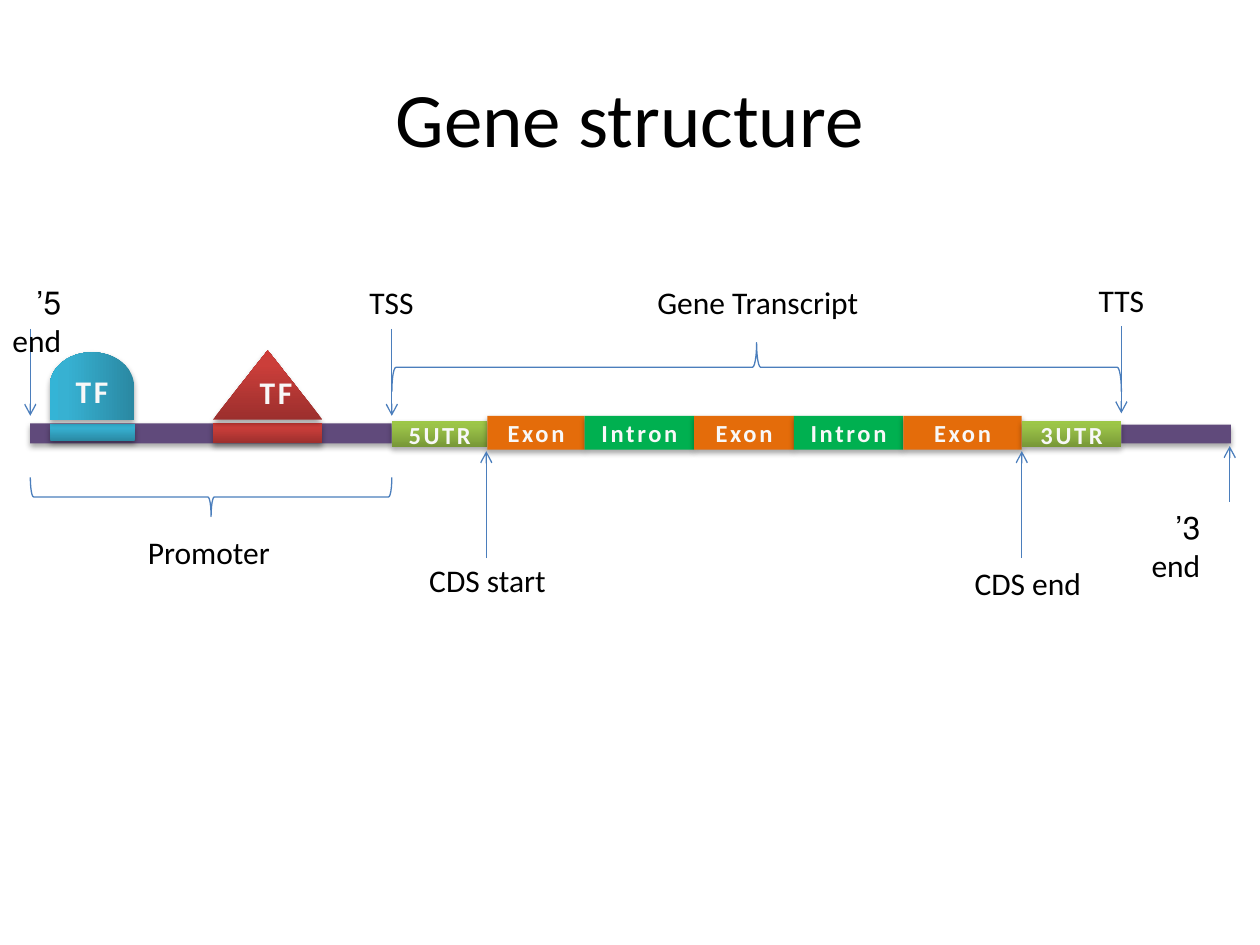
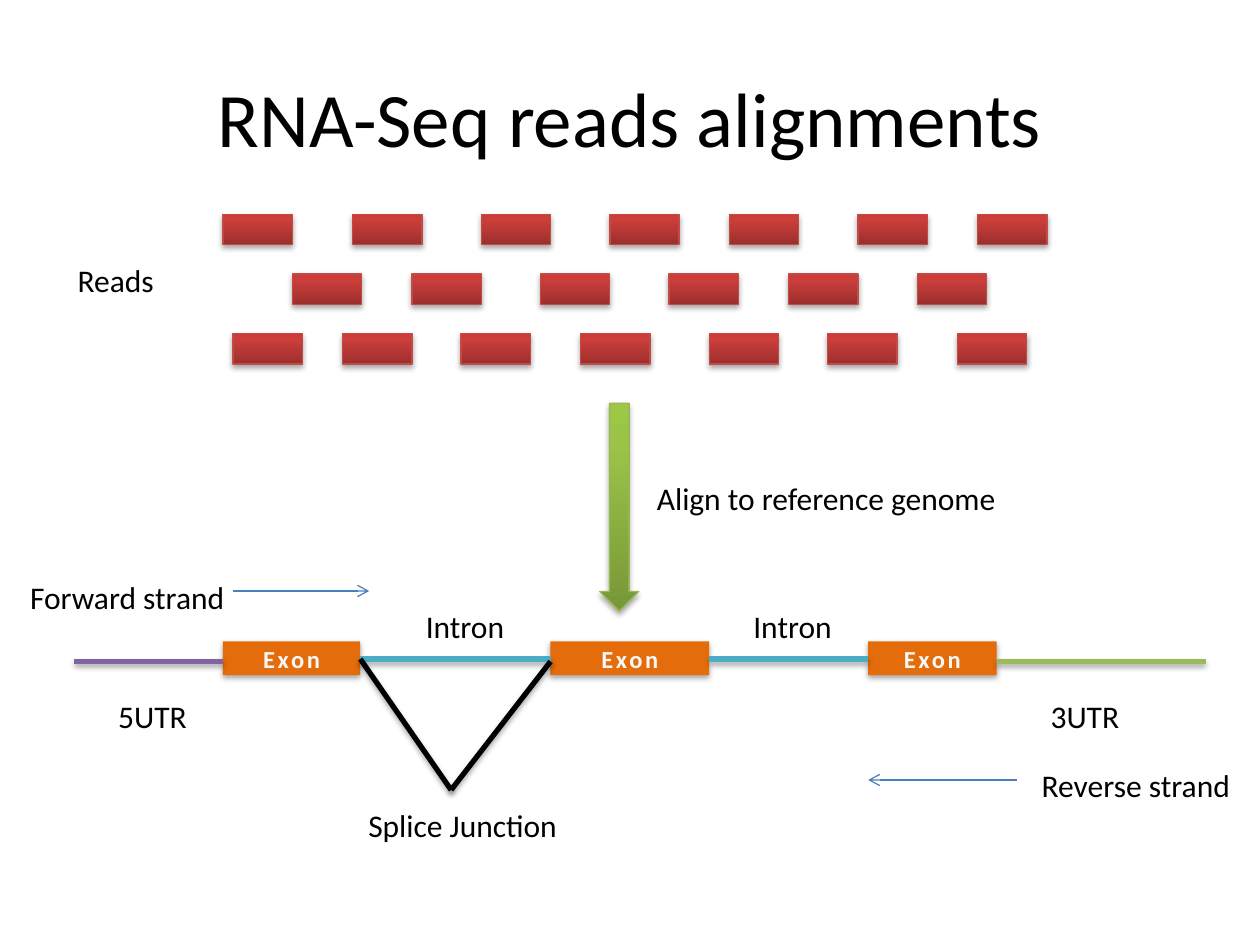
from itertools import pairwise

from pptx import Presentation
from pptx.dml.color import RGBColor
from pptx.enum.shapes import MSO_CONNECTOR, MSO_SHAPE as SHAPE
from pptx.enum.text import MSO_ANCHOR as ANCHOR, PP_ALIGN as ALIGN
from pptx.oxml import parse_xml
from pptx.oxml.ns import nsdecls, qn
from pptx.util import Pt

FONT = "Calibri"
BLACK = RGBColor(0x00, 0x00, 0x00)
OFF_WHITE = RGBColor(0xF8, 0xF8, 0xF8)
LINE_BLUE = RGBColor(0x4B, 0x7E, 0xBC)
DARK_PURPLE = RGBColor(0x60, 0x4A, 0x7B)
PURPLE = RGBColor(0x80, 0x64, 0xA2)
ORANGE = RGBColor(0xE4, 0x6C, 0x0A)
INTRON_GREEN = RGBColor(0x00, 0xB0, 0x50)
TEAL = RGBColor(0x4B, 0xAC, 0xC6)
GREEN = RGBColor(0x9B, 0xBB, 0x59)
GREEN_EDGE = RGBColor(0x98, 0xB9, 0x55)
RED_EDGE = RGBColor(0xBF, 0x4C, 0x48)

# Gradients run from the bottom up, with stops at 0, 80 and 100 percent
GREEN_GRADIENT = (RGBColor(0x77, 0x97, 0x37), RGBColor(0x9B, 0xC3, 0x48), RGBColor(0x9D, 0xC7, 0x46))
BLUE_GRADIENT = (RGBColor(0x2A, 0x88, 0xA2), RGBColor(0x37, 0xB1, 0xD2), RGBColor(0x34, 0xB4, 0xD6))
RED_GRADIENT = (RGBColor(0x9C, 0x2F, 0x2D), RGBColor(0xCB, 0x3E, 0x3A), RGBColor(0xCE, 0x3B, 0x37))

EXON_H = 19.4
LABEL_H = 28.8


def write(tf, text, size, color=BLACK, align=ALIGN.RIGHT, strong=False):
    """Add one right-to-left paragraph; strong text is bold and spaced out."""
    p = tf.paragraphs[0]
    p.alignment = align
    p._p.get_or_add_pPr().set("rtl", "1")
    r = p.add_run()
    r.text = text
    r.font.name, r.font.size, r.font.bold = FONT, Pt(size), strong
    r.font.color.rgb = color
    if strong:
        r._r.get_or_add_rPr().set("spc", "150")


def add_title(s, text):
    tf = s.shapes.add_textbox(Pt(36), Pt(21.6), Pt(648), Pt(90)).text_frame
    tf.word_wrap = True
    tf.vertical_anchor = ANCHOR.MIDDLE
    write(tf, text, 44, align=ALIGN.CENTER)


def add_label(s, text, x, y, w, color=BLACK, strong=False):
    tf = s.shapes.add_textbox(Pt(x), Pt(y), Pt(w), Pt(LABEL_H)).text_frame
    tf.word_wrap = False
    write(tf, text, 18, color, strong=strong)
    return tf


def add_end_label(s, text, x, y):
    """Label of a strand end, broken over two lines by a wide right margin."""
    tf = add_label(s, text, x, y, 60.5)
    tf.word_wrap = True
    tf.margin_left, tf.margin_right = Pt(0), Pt(25.5)


def cast_shadow(sp):
    sp.element.spPr.find(qn("a:effectLst")).append(parse_xml(
        f'<a:outerShdw {nsdecls("a")} blurRad="40000" dist="23000" dir="5400000" '
        'rotWithShape="0"><a:srgbClr val="000000"><a:alpha val="35000"/>'
        '</a:srgbClr></a:outerShdw>'))


def fill_gradient(sp, colors):
    sp.fill.gradient()
    stops = "".join(f'<a:gs pos="{pos}000"><a:srgbClr val="{color}"/></a:gs>'
                    for pos, color in zip((0, 80, 100), colors))
    spPr = sp.element.spPr
    spPr.replace(spPr.find(qn("a:gradFill")), parse_xml(
        f'<a:gradFill {nsdecls("a")} rotWithShape="1"><a:gsLst>{stops}</a:gsLst>'
        '<a:lin ang="16200000" scaled="0"/></a:gradFill>'))


def add_block(s, x, y, w, h, fill, text="", kind=SHAPE.RECTANGLE, edge=None, size=14):
    """Shadowed shape; fill is one colour or a tuple of gradient colours."""
    sp = s.shapes.add_shape(kind, Pt(x), Pt(y), Pt(w), Pt(h))
    if isinstance(fill, RGBColor):
        sp.fill.solid()
        sp.fill.fore_color.rgb = fill
    else:
        fill_gradient(sp, fill)
    if edge is None:
        sp.line.fill.background()
    else:
        sp.line.color.rgb = edge
        sp.line.width = Pt(0.75)
    sp.shadow.inherit = False
    cast_shadow(sp)
    if text:
        sp.text_frame.vertical_anchor = ANCHOR.MIDDLE
        write(sp.text_frame, text, size, OFF_WHITE, ALIGN.CENTER, strong=True)
    return sp


def add_line(s, x1, y1, x2, y2, color, width):
    line = s.shapes.add_connector(MSO_CONNECTOR.STRAIGHT, Pt(x1), Pt(y1), Pt(x2), Pt(y2))
    line.line.color.rgb = color
    line.line.width = Pt(width)
    line.element.spPr.append(parse_xml(f'<a:effectLst {nsdecls("a")}/>'))
    return line


def add_arrow(s, x1, y1, x2, y2):
    arrow = add_line(s, x1, y1, x2, y2, LINE_BLUE, 0.75)
    arrow.element.spPr.find(qn("a:ln")).append(
        parse_xml(f'<a:tailEnd {nsdecls("a")} type="arrow"/>'))


def add_strand(s, x1, y1, x2, y2, color):
    cast_shadow(add_line(s, x1, y1, x2, y2, color, 3))


def add_brace(s, left, top, width, depth, rotation):
    """Horizontal brace over the given area: rotation 90 points down, 270 up."""
    x, y = left + (width - depth) / 2, top + (depth - width) / 2
    sp = s.shapes.add_shape(SHAPE.RIGHT_BRACE, Pt(x), Pt(y), Pt(depth), Pt(width))
    sp.rotation = rotation
    sp.fill.background()
    sp.line.color.rgb = LINE_BLUE
    sp.line.width = Pt(0.75)
    sp.shadow.inherit = False


def add_transcription_factors(s):
    add_block(s, 28.8, 242.6, 48.2, 9.4, BLUE_GRADIENT)
    dome = add_block(s, 33.1, 196.6, 38.9, 48.2, BLUE_GRADIENT, "TF",
                     SHAPE.FLOWCHART_DELAY, size=18)
    dome.rotation = 270
    dome.text_frame._txBody.bodyPr.set("vert", "vert")
    add_block(s, 121.7, 241.9, 62.6, 11.5, RED_GRADIENT)
    add_block(s, 121.7, 200.2, 62.6, 39.6, RED_GRADIENT, kind=SHAPE.ISOSCELES_TRIANGLE)
    add_label(s, "TF ", 135.4, 209.5, 40.3, OFF_WHITE, strong=True)


def add_transcript(s):
    """Segments that lie end to end from the start to the end of transcription."""
    styles = {"UTR": (240.8, 14.8, GREEN_GRADIENT), "Exon": (237.6, EXON_H, ORANGE),
              "Intron": (237.6, EXON_H, INTRON_GREEN)}
    names = ("5UTR", "Exon", "Intron", "Exon", "Intron", "Exon", "3UTR")
    edges = (223.9, 278.6, 334.1, 396.7, 453.6, 516.2, 583.9, 640.8)
    for name, (left, right) in zip(names, pairwise(edges)):
        y, h, fill = styles[name.lstrip("35")]
        add_block(s, left, y, right - left, h, fill, name)


def build_gene_structure(s):
    add_title(s, "Gene structure")
    add_block(s, 17.3, 241.9, 206.6, 11.5, DARK_PURPLE)
    add_block(s, 640.8, 242.6, 62.6, 10.8, DARK_PURPLE)
    add_transcription_factors(s)
    add_transcript(s)
    add_brace(s, 17.3, 272.8, 206.6, 22.3, 90)
    add_brace(s, 223.9, 195.8, 416.9, 28.1, 270)
    for x, start, end in ((17.3, 187.9, 237.6), (223.9, 187.9, 237.6),
                          (640.8, 186.5, 236.2), (277.9, 319, 257.8),
                          (583.9, 319, 257.8), (702.7, 286.6, 254.9)):
        add_arrow(s, x, start, x, end)
    add_end_label(s, "5’ end", 0, 158.4)
    add_end_label(s, "3’ end", 650.9, 286.6)
    for text, x, y, w in (("TSS", 203.8, 158.4, 39.6), ("TTS", 619.9, 157, 41),
                          ("Gene Transcript", 365.8, 158.4, 131.8),
                          ("Promoter", 76.3, 301, 85),
                          ("CDS start", 236.9, 316.8, 82.1),
                          ("CDS end", 548.6, 319, 76.3)):
        add_label(s, text, x, y, w)


def add_reads(s):
    rows = {122.4: (127.4, 201.6, 275, 348.5, 416.9, 490.3, 558.7),
            156.6: (167, 235.4, 308.9, 382.3, 450.7, 524.2),
            190.8: (133.2, 195.8, 263.5, 331.9, 405.4, 473, 547.2)}
    for y, lefts in rows.items():
        for x in lefts:
            add_block(s, x, y, 39.6, 17.3, RED_GRADIENT, edge=RED_EDGE)


def build_read_alignments(s):
    add_title(s, "RNA-Seq reads alignments")
    add_reads(s)
    add_block(s, 342.7, 230.4, 22.3, 118.8, GREEN_GRADIENT,
              kind=SHAPE.DOWN_ARROW, edge=GREEN_EDGE)
    for x, w in ((127.4, 78.5), (314.6, 90.7), (496.1, 73.4)):
        add_block(s, x, 366.5, w, EXON_H, ORANGE, "Exon")
    for x1, y1, x2, y2, color in ((205.9, 376.6, 314.6, 376.6, TEAL),
                                  (405.4, 376.6, 496.1, 376.6, TEAL),
                                  (127.4, 378, 42.5, 378, PURPLE),
                                  (689, 378, 569.5, 378, GREEN),
                                  (314.6, 378, 257.8, 451.4, BLACK),
                                  (205.9, 376.6, 257.8, 451.4, BLACK)):
        add_strand(s, x1, y1, x2, y2, color)
    add_arrow(s, 133.2, 337.7, 211, 337.7)
    add_arrow(s, 581, 445.7, 496.1, 445.7)
    for text, x, y, w in (("Reads", 36.7, 145.4, 58.3),
                          ("Align to reference genome", 365.8, 270, 210.2),
                          ("Forward strand", 8.6, 326.9, 126.7),
                          ("Intron", 235.4, 343.4, 59.8),
                          ("Intron", 422.6, 343.4, 59.8),
                          ("5UTR", 59.8, 394.6, 54), ("3UTR", 592.6, 394.6, 54),
                          ("Reverse strand", 586.8, 434.2, 123.1),
                          ("Splice Junction", 201.6, 457.2, 123.8)):
        add_label(s, text, x, y, w)


def main():
    prs = Presentation()
    prs.slide_width, prs.slide_height = Pt(720), Pt(540)
    blank = prs.slide_layouts[6]
    for build in (build_gene_structure, build_read_alignments):
        build(prs.slides.add_slide(blank))
    prs.save("out.pptx")


if __name__ == "__main__":
    main()
